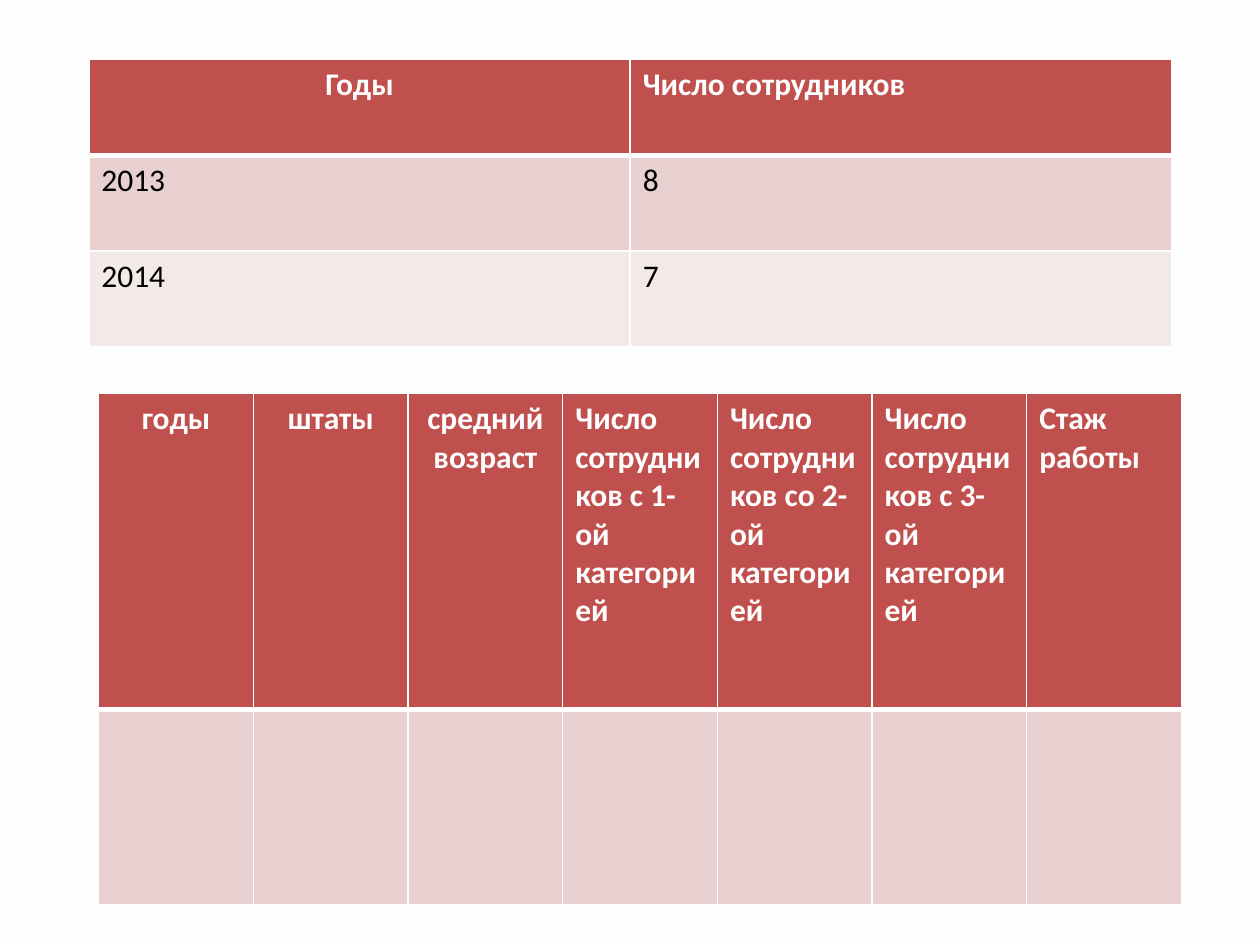
from lxml.etree import SubElement
from pptx import Presentation
from pptx.dml.color import RGBColor
from pptx.enum.text import PP_ALIGN
from pptx.oxml.ns import qn
from pptx.util import Cm, Pt

COLORS = {
    "paper": "FFFEFF",
    "header": "C0504D",
    "odd_row": "E8D0D0",
    "even_row": "F4E9E9",
    "body_text": "000000",
}
THIN, THICK = Pt(1), Pt(3)

STAFF_ROWS = [
    ["Годы", "Число сотрудников"],
    ["2013", "8"],
    ["2014", "7"],
]
CATEGORY_HEADINGS = [
    "годы",
    "штаты",
    "средний\vвозраст",
    "Число сотрудников с 1-ой категорией",
    "Число сотрудников со 2-ой категорией",
    "Число сотрудников с 3-ой категорией",
    "Стаж работы",
]


def rgb(name):
    return RGBColor.from_string(COLORS[name])


def set_borders(cell, top, bottom):
    properties = cell._tc.get_or_add_tcPr()
    for side, width in (("L", THIN), ("R", THIN), ("T", top), ("B", bottom)):
        line = SubElement(properties, qn(f"a:ln{side}"), w=str(width))
        fill = SubElement(line, qn("a:solidFill"))
        SubElement(fill, qn("a:srgbClr"), val=COLORS["paper"])


def style_cell(cell, text, row, centred):
    is_header = row == 0
    set_borders(cell, THICK if row == 1 else THIN, THICK if is_header else THIN)
    cell.fill.solid()
    band = "odd_row" if row % 2 else "even_row"
    cell.fill.fore_color.rgb = rgb("header" if is_header else band)

    paragraph = cell.text_frame.paragraphs[0]
    paragraph.text = text
    paragraph.alignment = PP_ALIGN.CENTER if centred else PP_ALIGN.LEFT
    font = paragraph.font
    font.size = Pt(18)
    for run in paragraph.runs:
        run.font.name = "Calibri"
        run.font.size = Pt(18)
        run.font.bold = is_header
        run.font.color.rgb = rgb("paper" if is_header else "body_text")


def add_banded_table(slide, box, rows, row_heights, centred_headings):
    """Fill box with equal columns; the first headings are centred."""
    left, top, width, height = box
    column_count = len(rows[0])
    table = slide.shapes.add_table(
        len(rows), column_count, left, top, width, height).table
    for column in table.columns:
        column.width = width // column_count
    for row, (texts, row_height) in enumerate(zip(rows, row_heights)):
        table.rows[row].height = row_height
        for column, text in enumerate(texts):
            centred = row == 0 and column < centred_headings
            style_cell(table.cell(row, column), text, row, centred)


def add_staff_table(slide, left, top, width, height):
    row_heights = [height // len(STAFF_ROWS)] * len(STAFF_ROWS)
    add_banded_table(slide, (left, top, width, height), STAFF_ROWS,
                     row_heights, centred_headings=1)


def add_category_table(slide, left, top, width, height):
    rows = [CATEGORY_HEADINGS, [""] * len(CATEGORY_HEADINGS)]
    header_height = Cm(6.37)
    add_banded_table(slide, (left, top, width, height), rows,
                     [header_height, height - header_height],
                     centred_headings=3)


def main():
    presentation = Presentation()
    presentation.slide_width = Cm(25.4)
    presentation.slide_height = Cm(19.05)
    slide = presentation.slides.add_slide(presentation.slide_layouts[6])
    slide.background.fill.solid()
    slide.background.fill.fore_color.rgb = rgb("paper")

    add_staff_table(slide, Cm(1.79), Cm(1.2), Cm(21.83), Cm(5.79))
    add_category_table(slide, Cm(1.99), Cm(7.93), Cm(21.83), Cm(10.31))
    presentation.save("out.pptx")


if __name__ == "__main__":
    main()
